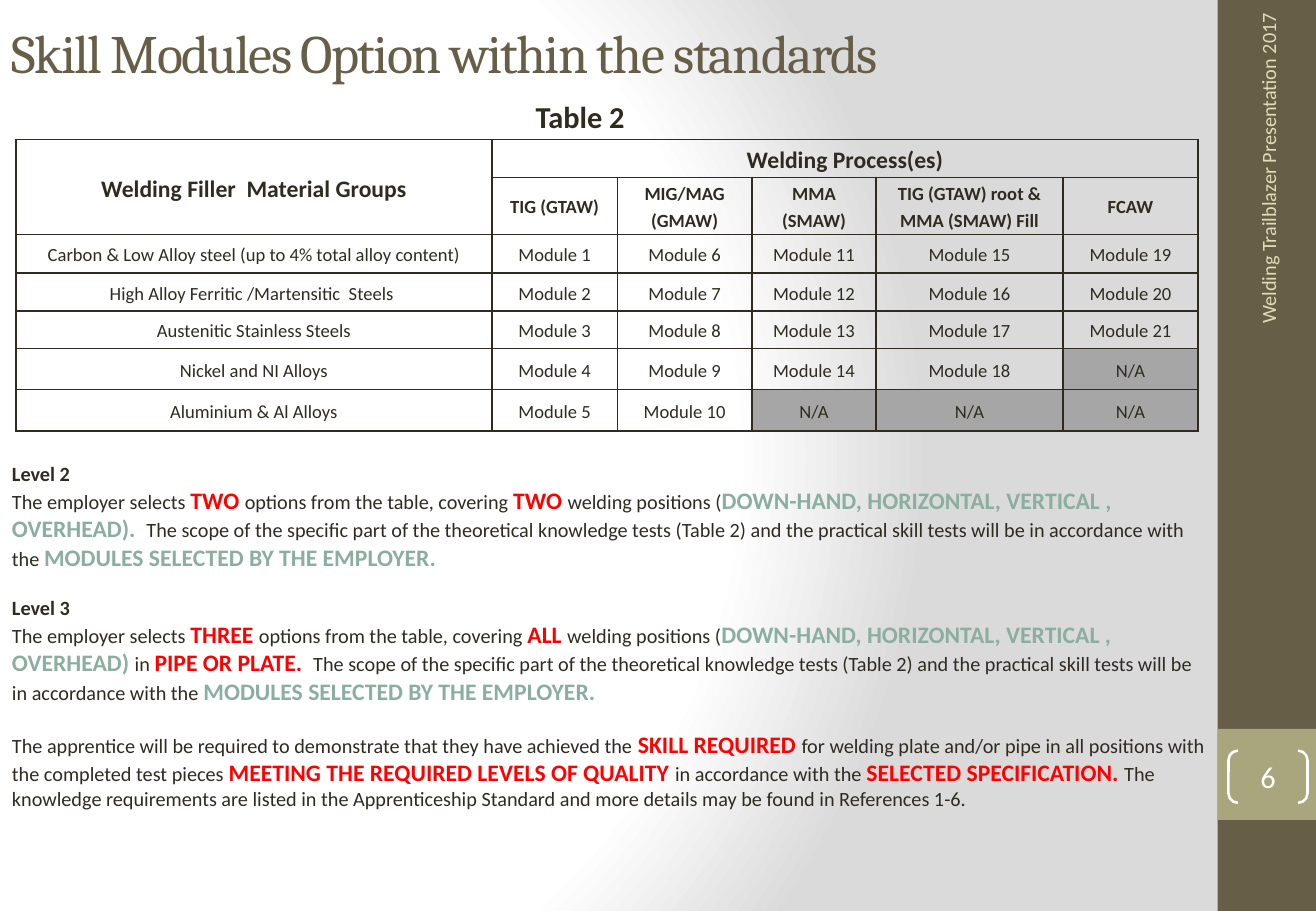
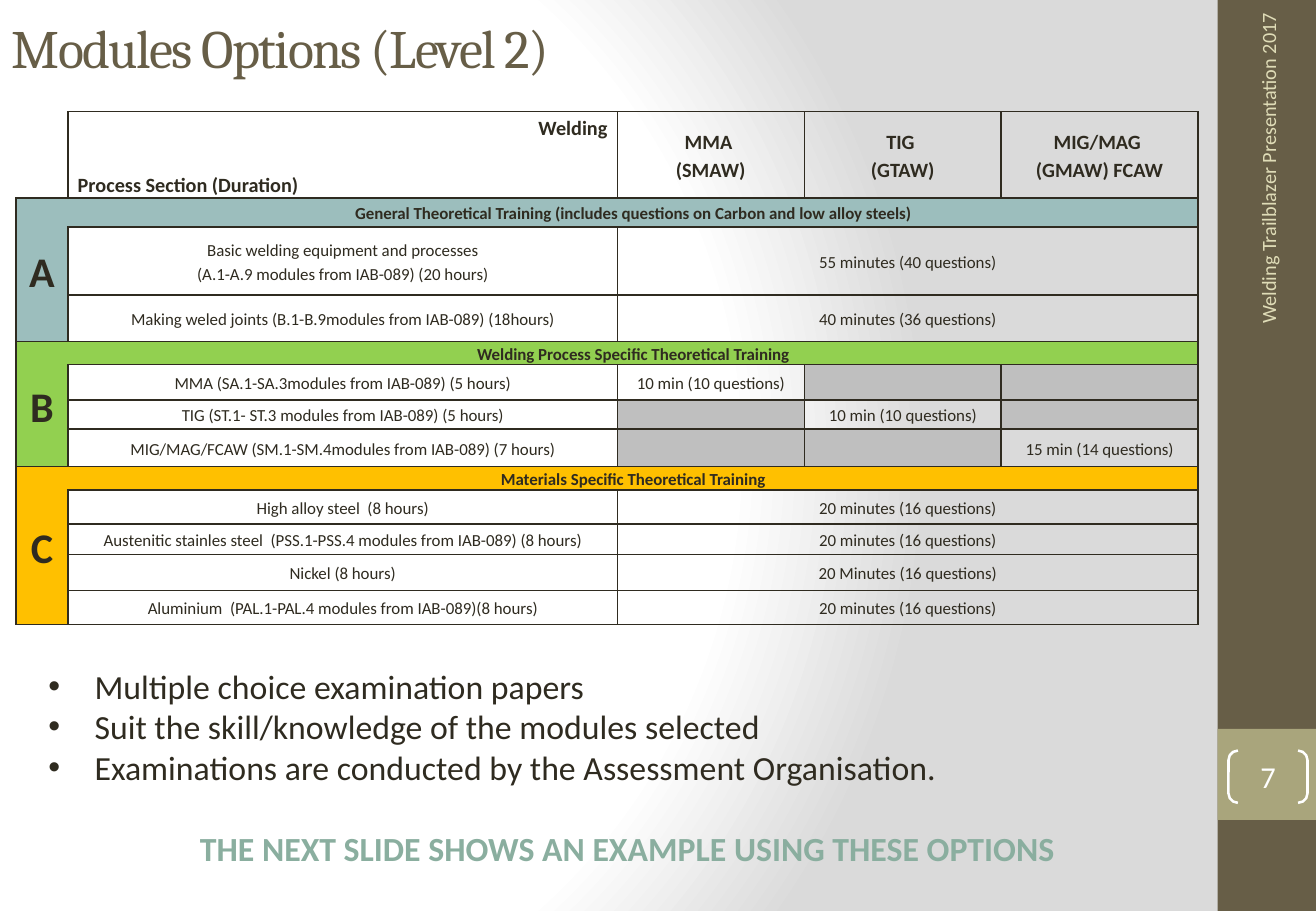
from dataclasses import dataclass

from lxml import etree
from pptx import Presentation
from pptx.dml.color import RGBColor
from pptx.enum import shapes, text
from pptx.oxml import ns, parse_xml
from pptx.util import Inches, Pt

CENTER, RIGHT, LEFT = text.PP_ALIGN.CENTER, text.PP_ALIGN.RIGHT, text.PP_ALIGN.LEFT
MIDDLE, TOP = text.MSO_ANCHOR.MIDDLE, text.MSO_ANCHOR.TOP


@dataclass(frozen=True)
class Theme:
    heading_font: str = "Cambria"
    body_font: str = "Calibri"
    ink: str = "2F2B20"
    band: str = "675E47"
    badge: str = "A9A57C"
    footer: str = "DFDCB7"
    white: str = "FFFFFF"
    red: str = "FF0000"
    outline: str = "6D7A74"
    not_offered: str = "A6A6A6"
    blocked: str = "BFBFBF"
    page_stops: tuple = ((0, "FFFFFF"), (75, "FFFFFF"), (100, "DADADA"))
    sage_stops: tuple = ((0, "45564F"), (43, "8AAE9F"), (48, "81A294"), (100, "45564F"))
    title_size: float = 32
    letter_size: float = 25
    bullet_size: float = 20
    caption_size: float = 18
    strong_size: float = 14
    text_size: float = 12
    cell_size: float = 11
    small_size: float = 10
    line_height: float = 1.22
    cell_spacing: float = 1.15


T = Theme()
PLAIN, BOLD, RED, SAGE = "plain", "bold", "red", "sage"
FOOTER = "Welding Trailblazer Presentation 2017"
NO_GRID_STYLE = "{2D5ABB26-0587-4C30-8999-92F81FD0307C}"


def rgb(colour):
    return RGBColor.from_string(colour)


def gradient(stops, direction):
    marks = "".join(
        f'<a:gs pos="{pos * 1000}"><a:srgbClr val="{colour}"/></a:gs>' for pos, colour in stops)
    return (f'<a:gradFill {ns.nsdecls("a")} rotWithShape="1"><a:gsLst>{marks}</a:gsLst>'
            f'{direction}</a:gradFill>')


def line_xml(tag, colour, points):
    return parse_xml(f'<a:{tag} {ns.nsdecls("a")} w="{int(Pt(points))}"><a:solidFill>'
                     f'<a:srgbClr val="{colour}"/></a:solidFill></a:{tag}>')


def style_run(run, size, colour=T.ink, bold=False, font=T.body_font):
    run.font.size, run.font.bold, run.font.name = Pt(size), bold, font
    run.font.color.rgb = rgb(colour)


def style_sage(run, size):
    run.font.size, run.font.bold, run.font.name = Pt(size), True, T.body_font
    props = run.font._element
    props.insert(0, parse_xml(gradient(T.sage_stops, '<a:lin ang="5400000" scaled="0"/>')))
    props.insert(0, line_xml("ln", T.outline, 0.71))


def add_runs(paragraph, runs):
    for words, kind in runs:
        run = paragraph.add_run()
        run.text = words
        if kind == SAGE:
            style_sage(run, T.strong_size)
        elif kind == RED:
            style_run(run, T.strong_size, T.red, True)
            run.font._element.insert(0, line_xml("ln", T.outline, 0.71))
        else:
            style_run(run, T.text_size, bold=kind == BOLD)


def text_box(slide, box, words="", size=T.text_size, colour=T.ink, bold=False,
             font=T.body_font, align=LEFT, anchor=TOP, wrap=True):
    shape = slide.shapes.add_textbox(*map(Inches, box))
    frame = shape.text_frame
    frame.word_wrap, frame.vertical_anchor = wrap, anchor
    frame.text = words
    for paragraph in frame.paragraphs:
        paragraph.alignment = align
        for run in paragraph.runs:
            style_run(run, size, colour, bold, font)
    return shape


def plain_shape(slide, kind, box, fill=None):
    shape = slide.shapes.add_shape(kind, *map(Inches, box))
    shape.shadow.inherit = False
    if fill:
        shape.fill.solid()
        shape.fill.fore_color.rgb = rgb(fill)
        shape.line.fill.background()
    else:
        shape.fill.background()
    return shape


def add_background(slide):
    focus = '<a:path path="circle"><a:fillToRect l="20000" t="50000" r="100000" b="50000"/></a:path>'
    slide.background.fill.solid()
    props = slide._element.cSld.find(ns.qn("p:bg")).find(ns.qn("p:bgPr"))
    props.replace(props[0], parse_xml(gradient(T.page_stops, focus)))


def add_side_band(slide, box, number):
    """Dark band with the running footer and the bracketed slide number."""
    left, top, width, height = box
    rectangle = shapes.MSO_SHAPE.RECTANGLE
    plain_shape(slide, rectangle, box, T.band)
    plain_shape(slide, rectangle, (left, top + 6, width, 0.75), T.badge)

    brackets = plain_shape(slide, shapes.MSO_SHAPE.DOUBLE_BRACKET,
                           (left + 0.09, top + 6.18, 0.65, 0.43))
    brackets.adjustments[0] = 0.18
    brackets.line.color.rgb, brackets.line.width = rgb(T.white), Pt(1.5)
    frame = brackets.text_frame
    frame.margin_left = frame.margin_right = frame.margin_top = frame.margin_bottom = 0
    frame.vertical_anchor = MIDDLE
    frame.text = str(number)
    frame.paragraphs[0].alignment = CENTER
    style_run(frame.paragraphs[0].runs[0], T.caption_size, T.white)

    footer = text_box(slide, (left - 2.52, top + 2.73, 5.87, 0.43), FOOTER,
                      colour=T.footer, align=RIGHT, anchor=MIDDLE)
    footer.rotation = 270


def new_slide(deck, title, title_height, number):
    slide = deck.slides.add_slide(deck.slide_layouts[6])
    add_background(slide)
    add_side_band(slide, (10.02, 0, 0.81, 7.5), number)
    heading = text_box(slide, (0, 0.02, 10.83, title_height), title, T.title_size, T.band,
                       font=T.heading_font, anchor=MIDDLE)
    heading.text_frame.paragraphs[0].runs[0].font._element.set("spc", "-100")
    return slide


def new_table(slide, left, top, cols, rows):
    table = slide.shapes.add_table(len(rows), len(cols), Inches(left), Inches(top),
                                   Inches(sum(cols)), Inches(sum(rows))).table
    table.first_row = table.horz_banding = False
    table._tbl.tblPr.find(ns.qn("a:tableStyleId")).text = NO_GRID_STYLE
    for column, width in zip(table.columns, cols):
        column.width = Inches(width)
    for row, height in zip(table.rows, rows):
        row.height = Inches(height)
    return table


def fill_cell(cell, words="", size=T.cell_size, bold=False, fill=None, sides="LRTB"):
    props = cell._tc.get_or_add_tcPr()
    for side in sides:
        props.append(line_xml("ln" + side, T.ink, 1))
    if fill:
        cell.fill.solid()
        cell.fill.fore_color.rgb = rgb(fill)
    else:
        cell.fill.background()
    cell.margin_left = cell.margin_right = Inches(0.08)
    cell.margin_top = cell.margin_bottom = 0
    cell.vertical_anchor = MIDDLE
    cell.text_frame.text = words
    for paragraph in cell.text_frame.paragraphs:
        paragraph.alignment, paragraph.line_spacing = CENTER, T.cell_spacing
        for run in paragraph.runs:
            style_run(run, size, bold=bold)
        if not paragraph.runs:
            etree.SubElement(paragraph._p, ns.qn("a:endParaRPr"), sz=str(int(size * 100)))


def fill_span(table, first, last, words, **style):
    """Merge the cells from first to last and style all of them alike."""
    for row in range(first[0], last[0] + 1):
        for col in range(first[1], last[1] + 1):
            fill_cell(table.cell(row, col), words if (row, col) == first else "", **style)
    table.cell(*first).merge(table.cell(*last))


def add_module_table(slide, left, top):
    processes = (("TIG (GTAW)", 5), ("MIG/MAG (GMAW)", 5), ("MMA\n(SMAW)", 4),
                 ("TIG (GTAW) root & MMA (SMAW) Fill", 4), ("FCAW", 3))
    materials = ("Carbon & Low Alloy steel (up to 4% total alloy content)",
                 "High Alloy Ferritic /Martensitic  Steels ", "Austenitic Stainless Steels",
                 "Nickel and NI Alloys", "Aluminium & Al Alloys")
    table = new_table(slide, left, top, (3.92, 1.03, 1.11, 1.02, 1.54, 1.11),
                      (0.31, 0.47, 0.32, 0.31, 0.31, 0.34, 0.34))
    head = dict(size=T.strong_size, bold=True)
    fill_span(table, (0, 0), (1, 0), "Welding Filler  Material Groups", **head)
    fill_span(table, (0, 1), (0, 5), "Welding Process(es)", **head)
    for row, material in enumerate(materials, 2):
        fill_cell(table.cell(row, 0), material)
    module = 0
    for col, (process, count) in enumerate(processes, 1):
        fill_cell(table.cell(1, col), process, bold=True)
        for row in range(2, 2 + len(materials)):
            if row - 2 < count:
                module += 1
                fill_cell(table.cell(row, col), f"Module {module}")
            else:
                fill_cell(table.cell(row, col), "N/A", fill=T.not_offered)


def add_level_rules(slide, box):
    select, covering = "The employer selects ", "options from the table, covering "
    positions = "welding positions ("
    directions = "DOWN-HAND, HORIZONTAL, VERTICAL , OVERHEAD)"
    scope = (("The scope of the specific part of the theoretical knowledge tests (Table 2) and the "
              "practical skill tests will be in accordance with the ", PLAIN),
             ("MODULES SELECTED BY THE EMPLOYER.", SAGE))
    paragraphs = (
        (("Level 2", BOLD),),
        ((select, PLAIN), ("TWO ", RED), (covering, PLAIN), ("TWO ", RED), (positions, PLAIN),
         (directions + ".  ", SAGE), *scope),
        (("Level 3", BOLD),),
        ((select, PLAIN), ("THREE ", RED), (covering, PLAIN), ("ALL ", RED), (positions, PLAIN),
         (directions + " ", SAGE), ("in ", PLAIN), ("PIPE OR PLATE.  ", RED), *scope),
        (("The apprentice will be required to demonstrate that they have achieved the ", PLAIN),
         ("SKILL REQUIRED ", RED),
         ("for welding plate and/or pipe in all positions with the completed test pieces ", PLAIN),
         ("MEETING THE REQUIRED LEVELS OF QUALITY ", RED), ("in accordance with the ", PLAIN),
         ("SELECTED SPECIFICATION. ", RED),
         ("The knowledge requirements are listed in the Apprenticeship Standard and more details "
          "may be found in References 1-6.", PLAIN)))
    frame = text_box(slide, box).text_frame
    for index, runs in enumerate(paragraphs):
        paragraph = frame.add_paragraph() if index else frame.paragraphs[0]
        if index in (2, 4):
            paragraph.space_before = Pt(T.text_size * T.line_height)
        add_runs(paragraph, runs)


def add_training_table(slide, left, top):
    short, full = "10 min (10 questions)", "20 minutes (16 questions)"
    sections = (
        ("A", "9CBEBD",
         "General Theoretical Training (includes questions on Carbon and low alloy steels)",
         (("Basic welding equipment and processes\n(A.1-A.9 modules from IAB-089) (20 hours)",
           "55 minutes (40 questions)"),
          ("Making weled joints (B.1-B.9modules from IAB-089) (18hours)",
           "40 minutes (36 questions)"))),
        ("B", "92D050", "Welding Process Specific Theoretical Training",
         (("MMA (SA.1-SA.3modules from IAB-089) (5 hours)", (short, "", "")),
          ("TIG (ST.1- ST.3 modules from IAB-089) (5 hours)", ("", short, "")),
          ("MIG/MAG/FCAW (SM.1-SM.4modules from IAB-089) (7 hours)",
           ("", "", "15 min (14 questions)")))),
        ("C", "FFC000", "Materials Specific Theoretical Training",
         (("High alloy steel  (8 hours)", full),
          ("Austenitic stainles steel  (PSS.1-PSS.4 modules from IAB-089) (8 hours)", full),
          ("Nickel (8 hours)", "20 Minutes (16 questions)"),
          ("Aluminium  (PAL.1-PAL.4 modules from IAB-089)(8 hours)", full))))
    table = new_table(slide, left, top, (0.43, 4.52, 1.54, 1.62, 1.62),
                      (0.71, 0.24, 0.56, 0.38, 0.19, 0.29, 0.24, 0.31, 0.19, 0.28, 0.25, 0.3, 0.28))
    fill_cell(table.cell(0, 0), sides="RB")
    heads = ("Welding\nProcess Section (Duration)", "MMA \n(SMAW)", "TIG \n(GTAW)",
             "MIG/MAG \n(GMAW) FCAW")
    for col, head in enumerate(heads, 1):
        fill_cell(table.cell(0, col), head, T.text_size, True)
    welding, section_head = table.cell(0, 1).text_frame.paragraphs
    welding.alignment, section_head.alignment = RIGHT, LEFT
    section_head.space_before = Pt(T.text_size * T.line_height * T.cell_spacing)

    row = 1
    for letter, colour, title, topics in sections:
        fill_span(table, (row, 0), (row + len(topics), 0), letter, size=T.letter_size,
                  bold=True, fill=colour, sides="LTB")
        fill_span(table, (row, 1), (row, 4), title, size=T.small_size, bold=True,
                  fill=colour, sides="RTB")
        for row, (topic, exam) in enumerate(topics, row + 1):
            fill_cell(table.cell(row, 1), topic, T.small_size)
            if isinstance(exam, str):
                fill_span(table, (row, 2), (row, 4), exam, size=T.small_size)
            else:
                for col, part in enumerate(exam, 2):
                    fill_cell(table.cell(row, col), part, T.small_size,
                              fill=None if part else T.blocked)
        row += 1


def add_exam_notes(slide, box):
    notes = ("Multiple choice examination papers", "Suit the skill/knowledge of the modules selected",
             "Examinations are conducted by the Assessment Organisation.")
    frame = text_box(slide, box, "\n".join(notes), T.bullet_size).text_frame
    for note in frame.paragraphs:
        props = note._p.get_or_add_pPr()
        props.set("marL", str(Inches(0.38)))
        props.set("indent", str(-Inches(0.38)))
        etree.SubElement(props, ns.qn("a:buFont"), typeface="Arial")
        etree.SubElement(props, ns.qn("a:buChar"), char="•")
    closing = frame.add_paragraph()
    closing.alignment = CENTER
    closing.space_before = Pt(T.bullet_size * T.line_height)
    run = closing.add_run()
    run.text = "THE NEXT SLIDE SHOWS AN EXAMPLE USING THESE OPTIONS"
    style_sage(run, T.bullet_size)


def main():
    deck = Presentation()
    deck.slide_width, deck.slide_height = Inches(10.83), Inches(7.5)

    standards = new_slide(deck, "Skill Modules Option within the standards", 0.81, 6)
    add_module_table(standards, 0.13, 1.15)
    add_level_rules(standards, (0, 3.75, 10.02, 3))
    text_box(standards, (4.31, 0.76, 0.94, 0.4), "Table 2", T.caption_size, bold=True, wrap=False)

    options = new_slide(deck, "Modules Options (Level 2)", 0.73, 7)
    add_training_table(options, 0.13, 0.92)
    add_exam_notes(options, (0.3, 5.43, 9.73, 1.78))

    deck.save("out.pptx")


if __name__ == "__main__":
    main()
